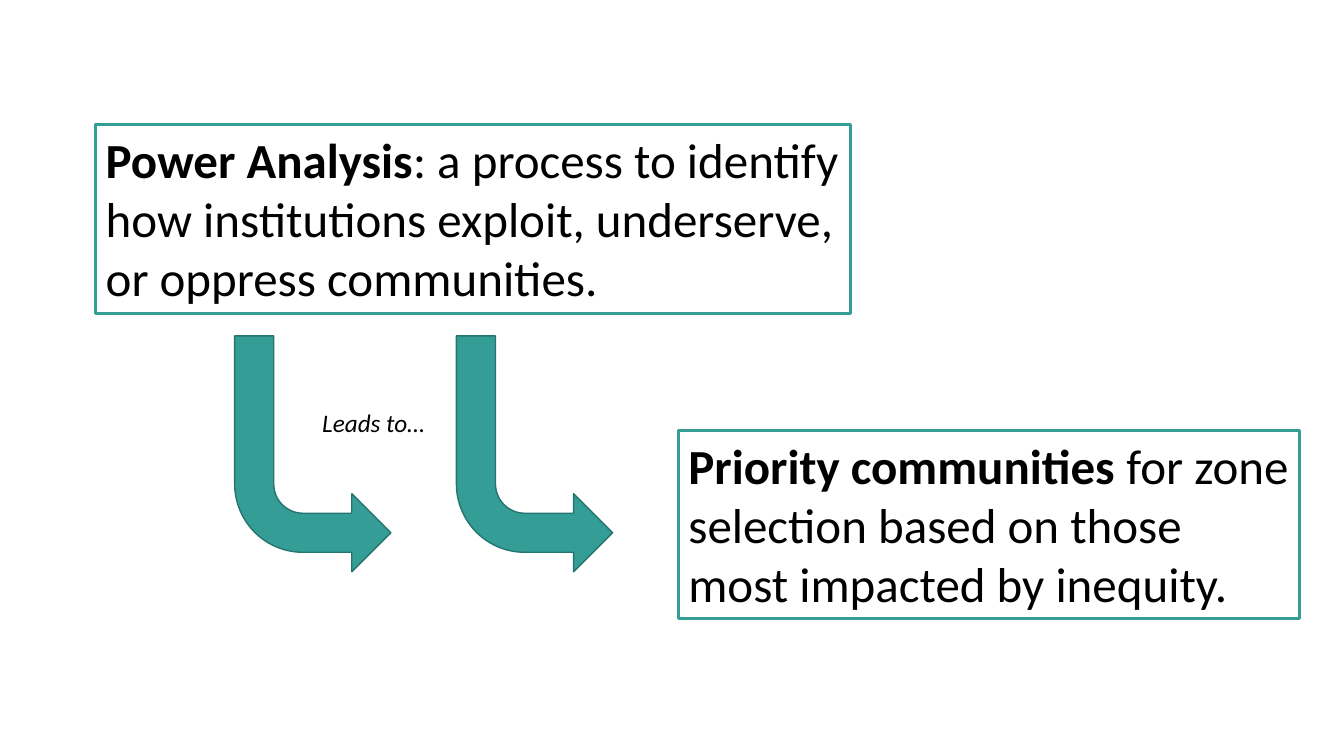
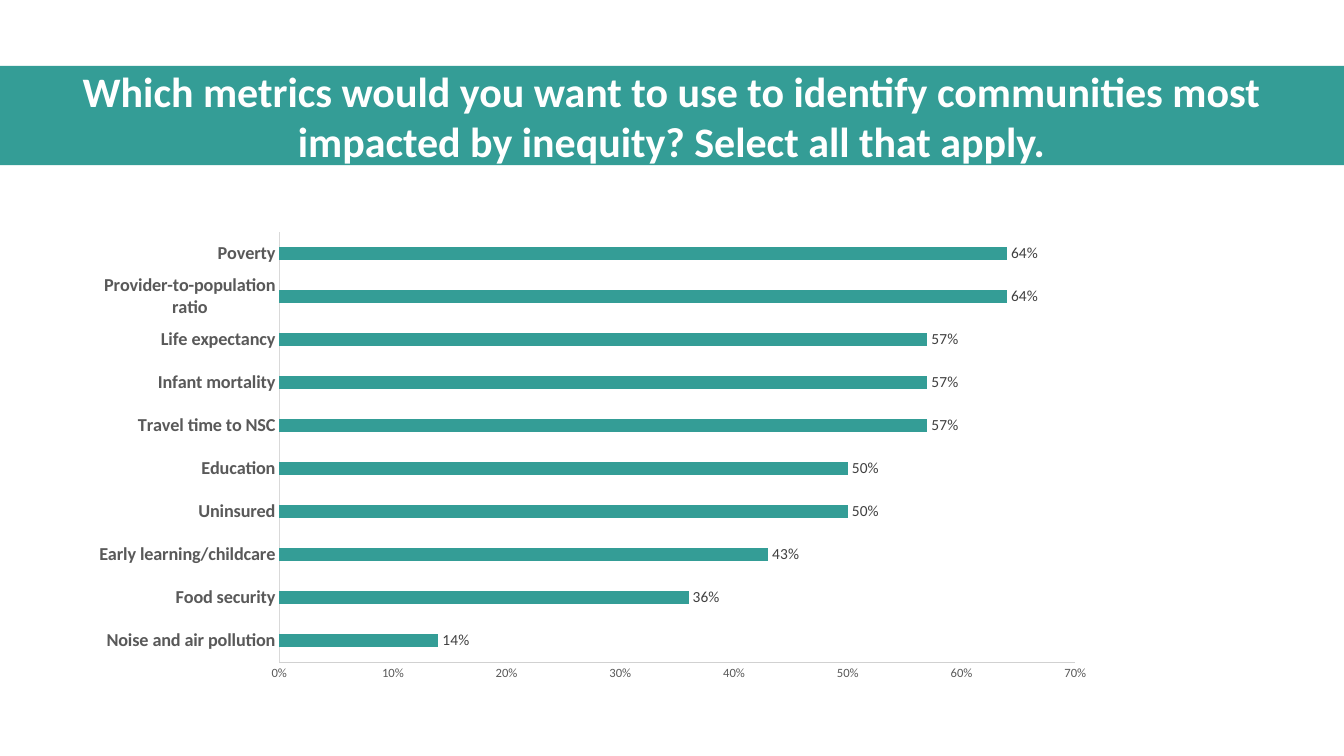
from pptx import Presentation
from pptx.chart.data import CategoryChartData
from pptx.dml.color import RGBColor
from pptx.enum.chart import XL_CHART_TYPE, XL_LABEL_POSITION, XL_TICK_MARK
from pptx.enum.shapes import MSO_SHAPE
from pptx.enum.text import MSO_ANCHOR, MSO_AUTO_SIZE, PP_ALIGN
from pptx.util import Pt

FONT = "Calibri"
TEAL, DARK_TEAL = "349D96", "26746F"
BLACK, WHITE = "000000", "FFFFFF"
LABEL_GRAY, VALUE_GRAY = "595959", "404040"
CATEGORY_LINE, VALUE_LINE = "D9D9D9", "D1D1D1"

METRICS = {
    "Noise and air pollution": 0.14,
    "Food security": 0.36,
    "Early learning/childcare": 0.43,
    "Uninsured": 0.5,
    "Education": 0.5,
    "Travel time to NSC": 0.57,
    "Infant mortality": 0.57,
    "Life expectancy": 0.57,
    "Provider-to-population ratio": 0.64,
    "Poverty": 0.64,
}


def color(hex_value):
    """Turn a hex string into a colour."""
    return RGBColor.from_string(hex_value)


def points(box):
    """Turn left, top, width and height into lengths."""
    return [Pt(value) for value in box]


def style_font(font, size, hex_value, bold=False, italic=False):
    """Give a font the shared typeface and its own look."""
    font.name = FONT
    font.size = Pt(size)
    font.color.rgb = color(hex_value)
    font.bold = bold
    font.italic = italic


def add_box(slide, box, kind=MSO_SHAPE.RECTANGLE, fill=None, line=None, line_width=1):
    """Add a flat shape with an optional fill and outline."""
    shape = slide.shapes.add_shape(kind, *points(box))
    shape.shadow.inherit = False
    if fill:
        shape.fill.solid()
        shape.fill.fore_color.rgb = color(fill)
    else:
        shape.fill.background()
    if line:
        shape.line.color.rgb = color(line)
        shape.line.width = Pt(line_width)
    else:
        shape.line.fill.background()
    return shape


def write(shape, runs, size, hex_value, align=PP_ALIGN.LEFT, anchor=MSO_ANCHOR.TOP, italic=False):
    """Write one wrapped paragraph of (text, bold) runs into a shape."""
    frame = shape.text_frame
    frame.word_wrap = True
    frame.vertical_anchor = anchor
    paragraph = frame.paragraphs[0]
    paragraph.alignment = align
    for text, bold in runs:
        run = paragraph.add_run()
        run.text = text
        style_font(run.font, size, hex_value, bold, italic)


def add_definition(slide, box, term, meaning):
    """Add an outlined box with a bold term and its meaning."""
    shape = add_box(slide, box, line=TEAL, line_width=2.25)
    write(shape, [(term, True), (meaning, False)], 35, BLACK)
    shape.text_frame.auto_size = MSO_AUTO_SIZE.SHAPE_TO_FIT_TEXT


def add_leading_arrows(slide, box, pitch):
    """Add two arrows bending down and right, with a caption between them."""
    left, top, width, height = box
    for index in range(2):
        arrow_box = (left + index * pitch, top, width, height)
        arrow = add_box(slide, arrow_box, MSO_SHAPE.BENT_ARROW, TEAL, DARK_TEAL)
        arrow.element.spPr.xfrm.set("flipV", "1")
    caption = slide.shapes.add_textbox(*points((left + 55.5, top + 47.5, 142.5, 29)))
    write(caption, [("Leads to…", False)], 18, BLACK, italic=True)


def add_title_band(slide, box, title):
    """Add a filled band with a centred title."""
    band = add_box(slide, box, fill=TEAL)
    write(band, [(title, True)], 30, WHITE, PP_ALIGN.CENTER, MSO_ANCHOR.MIDDLE)


def style_axis(axis, size, line, bold=False):
    """Style an axis without gridlines or tick marks."""
    axis.has_major_gridlines = False
    axis.major_tick_mark = XL_TICK_MARK.NONE
    axis.minor_tick_mark = XL_TICK_MARK.NONE
    axis.format.line.color.rgb = color(line)
    axis.format.line.width = Pt(0.75)
    style_font(axis.tick_labels.font, size, LABEL_GRAY, bold)


def add_metrics_chart(slide, box, metrics):
    """Add a bar chart of the share choosing each metric."""
    data = CategoryChartData(number_format="0%")
    data.categories = list(metrics)
    data.add_series("Series 1", list(metrics.values()))
    chart = slide.shapes.add_chart(XL_CHART_TYPE.BAR_CLUSTERED, *points(box), data).chart
    chart.has_legend = False
    chart.has_title = False
    style_font(chart.font, 10, BLACK)

    style_axis(chart.category_axis, 13, CATEGORY_LINE, bold=True)
    value_axis = chart.value_axis
    style_axis(value_axis, 9, VALUE_LINE)
    value_axis.minimum_scale = 0
    value_axis.maximum_scale = 0.7
    value_axis.major_unit = 0.1
    value_axis.tick_labels.number_format = "0%"
    value_axis.tick_labels.number_format_is_linked = False

    plot = chart.plots[0]
    plot.gap_width = 219
    plot.vary_by_categories = False
    bars = plot.series[0].format.fill
    bars.solid()
    bars.fore_color.rgb = color(TEAL)
    plot.has_data_labels = True
    labels = plot.data_labels
    labels.show_value = True
    labels.position = XL_LABEL_POSITION.OUTSIDE_END
    labels.number_format = "0%"
    labels.number_format_is_linked = False
    style_font(labels.font, 11, VALUE_GRAY)


def build_analysis_slide(slide):
    """Show how power analysis leads to priority communities."""
    add_definition(
        slide, (68.4, 89.2, 539.3, 134.6), "Power Analysis",
        ": a process to identify how institutions exploit, underserve, or oppress communities.",
    )
    add_leading_arrows(slide, (167.6, 240, 111.6, 168.5), 158.4)
    add_definition(
        slide, (484.6, 307.5, 443.7, 134.6), "Priority communities ",
        "for zone selection based on those most impacted by inequity.",
    )


def build_metrics_slide(slide, width):
    """Show the poll question and its results."""
    add_title_band(
        slide, (0, 47, width, 71),
        "Which metrics would you want to use to identify communities most "
        "impacted by inequity? Select all that apply.",
    )
    add_metrics_chart(slide, (56.2, 159, 734.4, 334), METRICS)


def main():
    """Build and save the presentation."""
    presentation = Presentation()
    presentation.slide_width, presentation.slide_height = Pt(960), Pt(540)
    blank = presentation.slide_layouts[6]
    build_analysis_slide(presentation.slides.add_slide(blank))
    build_metrics_slide(presentation.slides.add_slide(blank), presentation.slide_width.pt)
    presentation.save("out.pptx")


if __name__ == "__main__":
    main()
